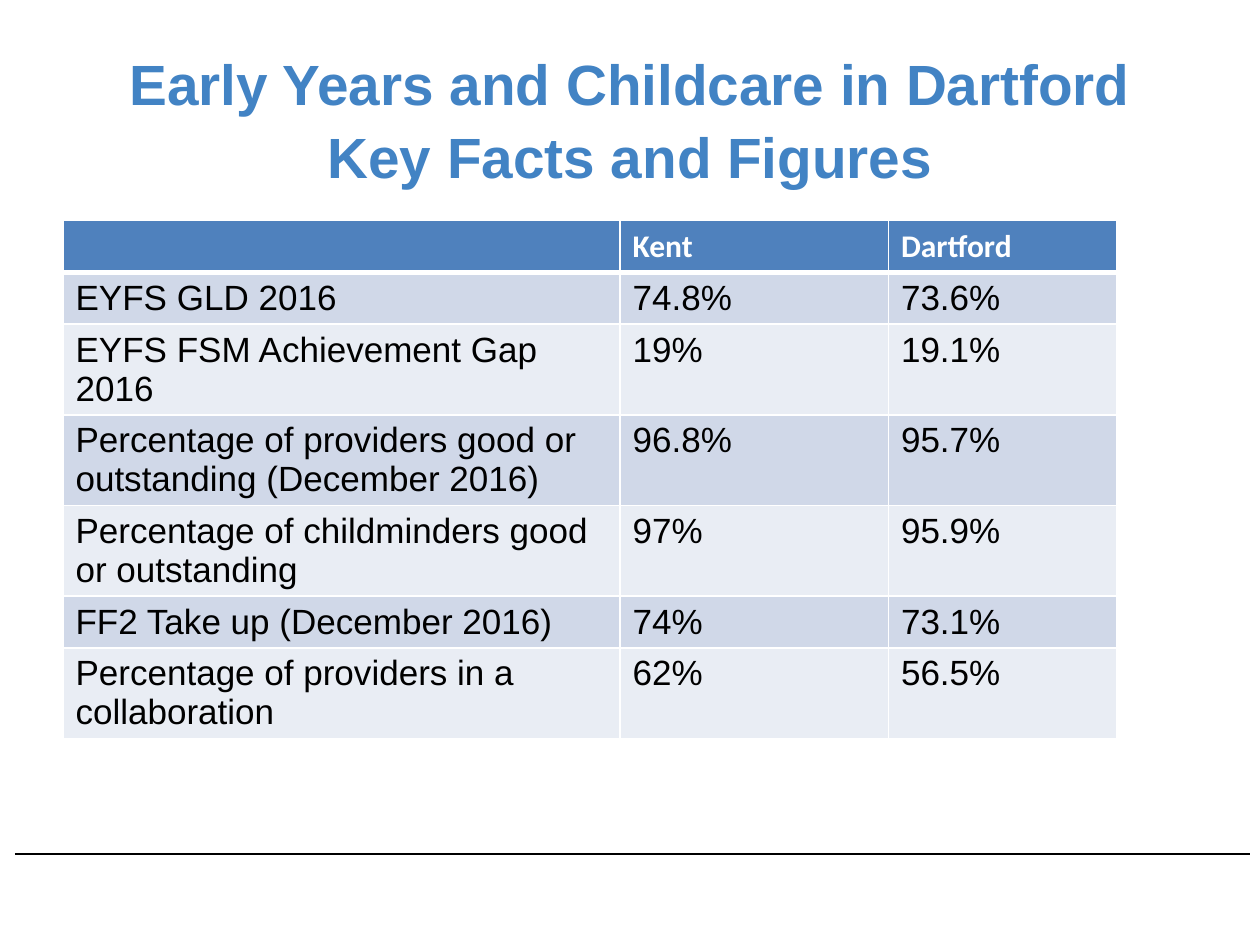
from lxml import etree
from pptx import Presentation
from pptx.dml.color import RGBColor
from pptx.enum.shapes import MSO_CONNECTOR
from pptx.enum.text import MSO_ANCHOR, PP_ALIGN
from pptx.oxml.ns import qn
from pptx.util import Cm, Pt

COLOURS = {
    "title": "4283C4",
    "header": "4F81BD",
    "band_dark": "D0D8E8",
    "band_light": "E9EDF4",
    "white": "FFFFFF",
    "black": "000000",
}

COLUMN_WIDTHS = (11.23, 5.41, 4.6)
ROW_HEIGHT = 1.04
FIGURES = (
    ("", "Kent", "Dartford"),
    ("EYFS GLD 2016", "74.8%", "73.6%"),
    ("EYFS FSM Achievement Gap 2016", "19%", "19.1%"),
    ("Percentage of providers good or outstanding (December 2016)", "96.8%", "95.7%"),
    ("Percentage of childminders good or outstanding", "97%", "95.9%"),
    ("FF2 Take up (December 2016)", "74%", "73.1%"),
    ("Percentage of providers in a collaboration", "62%", "56.5%"),
)


def rgb(name):
    return RGBColor.from_string(COLOURS[name])


def write(frame, text, font="Arial", size=20, colour="black", bold=False,
          align=PP_ALIGN.LEFT, spacing=1.0):
    """Fill a text frame with one paragraph; a newline becomes a line break."""
    para = frame.paragraphs[0]
    para.alignment = align
    para.line_spacing = spacing
    para.text = text.replace("\n", "\v")
    for span in para.runs:
        span.font.name = font
        span.font.size = Pt(size)
        span.font.bold = bold
        span.font.color.rgb = rgb(colour)


def set_title(page, text):
    title = page.shapes.title
    title.left, title.top = Cm(1.27), Cm(0.76)
    title.width, title.height = Cm(22.86), Cm(3.18)
    title.text_frame.word_wrap = True
    title.text_frame.vertical_anchor = MSO_ANCHOR.MIDDLE
    write(title.text_frame, text, size=32.4, colour="title", bold=True,
          align=PP_ALIGN.CENTER, spacing=1.07)


def set_borders(cell, bottom):
    """Draw white borders, 1 pt except for the given bottom width."""
    properties = cell._tc.get_or_add_tcPr()
    sides = (("lnL", 1), ("lnR", 1), ("lnT", 1), ("lnB", bottom))
    for position, (side, width) in enumerate(sides):
        line = etree.Element(qn(f"a:{side}"), w=str(Pt(width)))
        fill = etree.SubElement(line, qn("a:solidFill"))
        etree.SubElement(fill, qn("a:srgbClr"), val=COLOURS["white"])
        properties.insert(position, line)


def add_figures_table(page):
    frame = page.shapes.add_table(
        len(FIGURES), len(COLUMN_WIDTHS), Cm(1.27), Cm(4.45),
        Cm(sum(COLUMN_WIDTHS)), Cm(ROW_HEIGHT * len(FIGURES)))
    table = frame.table
    for column, width in zip(table.columns, COLUMN_WIDTHS):
        column.width = Cm(width)
    for row_index, values in enumerate(FIGURES):
        table.rows[row_index].height = Cm(ROW_HEIGHT)
        is_header = row_index == 0
        band = "band_dark" if row_index % 2 else "band_light"
        style = dict(font="Calibri", size=18, colour="white", bold=True) if is_header else {}
        for column_index, value in enumerate(values):
            cell = table.cell(row_index, column_index)
            cell.fill.solid()
            cell.fill.fore_color.rgb = rgb("header" if is_header else band)
            set_borders(cell, bottom=3 if is_header else 1)
            if value:
                write(cell.text_frame, value, **style)


def add_footer_rule(page):
    rule = page.shapes.add_connector(
        MSO_CONNECTOR.STRAIGHT, Cm(0.3), Cm(17.22), Cm(25.2), Cm(17.22))
    rule.line.color.rgb = rgb("black")
    rule.line.width = Pt(1)
    etree.SubElement(rule._element.spPr, qn("a:effectLst"))


def main():
    deck = Presentation()
    deck.slide_width, deck.slide_height = Cm(25.4), Cm(19.05)
    page = deck.slides.add_slide(deck.slide_layouts[5])
    add_footer_rule(page)
    set_title(page, "Early Years and Childcare in Dartford\nKey Facts and Figures")
    add_figures_table(page)
    deck.save("out.pptx")


if __name__ == "__main__":
    main()
